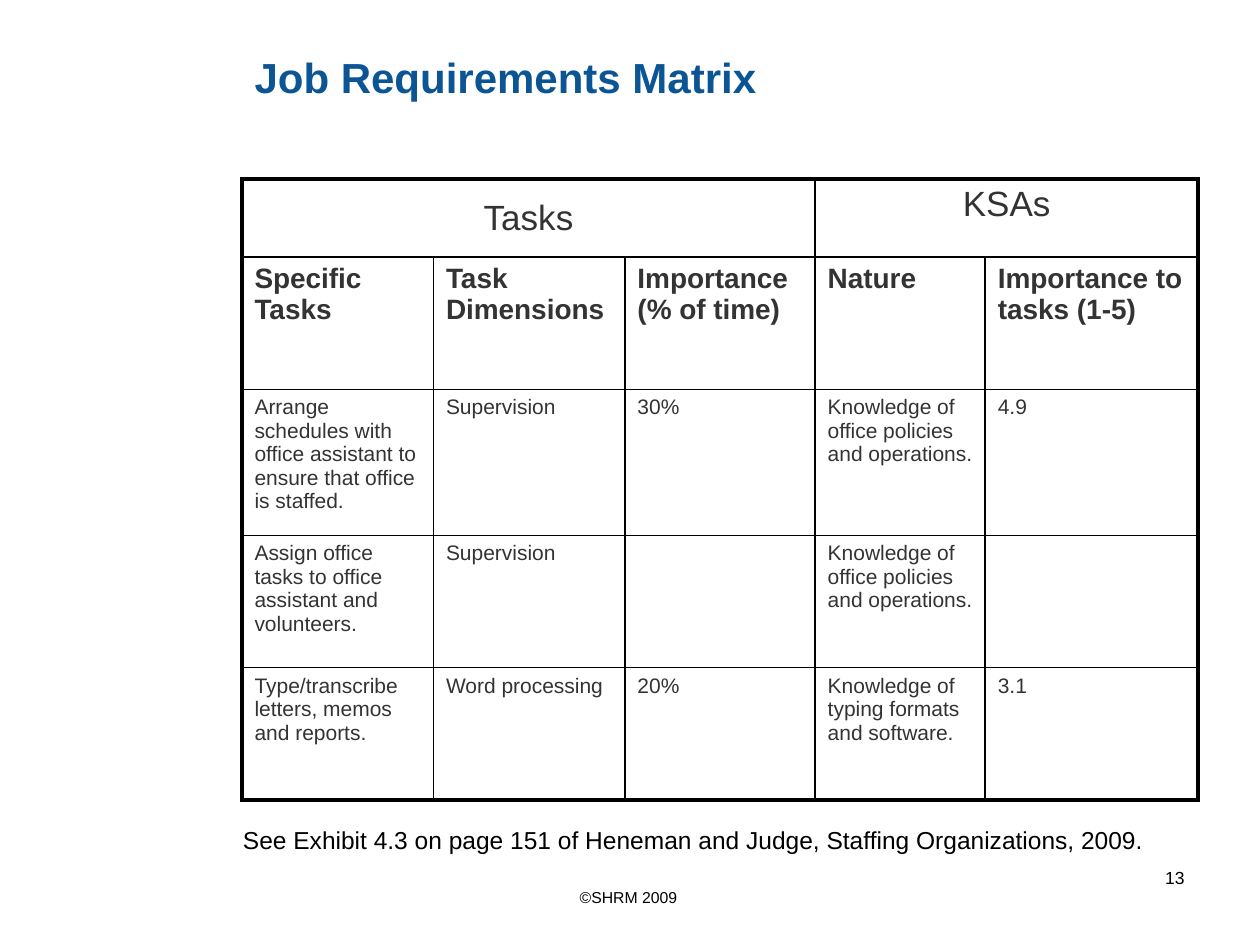
from dataclasses import dataclass

import pptx
import pptx.dml.color
import pptx.enum.text
import pptx.oxml
import pptx.oxml.ns
import pptx.util

Pt = pptx.util.Pt
Align = pptx.enum.text.PP_ALIGN
Anchor = pptx.enum.text.MSO_ANCHOR
AutoSize = pptx.enum.text.MSO_AUTO_SIZE

FONT = "Arial"
BLUE, GREY, BLACK = "0B5594", "333333", "000000"
THIN, THICK = 1, 2.25
CONTENT_LEFT = 138.24
COLUMN_WIDTHS = [109.44, 109.44, 108.72, 97.2, 121.68]
ROW_HEIGHTS = [44.64, 75.6, 83.52, 75.6, 75.6]
GROUP_ROW, HEADING_ROW = 0, 1
ROWS = [
    ["Tasks", "", "", "KSAs", ""],
    ["Specific Tasks", "Task Dimensions", "Importance (% of time)",
     "Nature", "Importance to tasks (1-5)"],
    ["Arrange schedules with office assistant to ensure that office is staffed.",
     "Supervision", "30%", "Knowledge of office policies and operations.", "4.9"],
    ["Assign office tasks to office assistant and volunteers.",
     "Supervision", "", "Knowledge of office policies and operations.", ""],
    ["Type/transcribe letters, memos and reports.",
     "Word processing", "20%", "Knowledge of typing formats and software.", "3.1"],
]


@dataclass
class Box:
    left: float
    top: float
    width: float
    height: float

    def lengths(self):
        return [Pt(value) for value in (self.left, self.top, self.width, self.height)]


@dataclass
class Caption:
    text: str
    box: Box
    size: float
    align: Align = Align.LEFT
    grow: bool = False


CAPTIONS = [
    Caption("See Exhibit 4.3 on page 151 of Heneman and Judge, Staffing Organizations, 2009.",
            Box(131.76, 468, 552.24, 23.76), 14, grow=True),
    Caption("13", Box(516.24, 491.76, 167.76, 37.44), 10, Align.RIGHT),
    Caption("©SHRM 2009 ", Box(246.24, 504, 228.24, 25.2), 9, Align.CENTER),
]


def color(value: str):
    return pptx.dml.color.RGBColor.from_string(value)


def write(text_frame, text: str, *, size: float, fill: str = BLACK,
          bold: bool = False, align: Align = Align.LEFT) -> None:
    paragraph = text_frame.paragraphs[0]
    paragraph.alignment = align
    paragraph.space_before = Pt(0)
    run = paragraph.add_run()
    run.text = text
    run.font.name = FONT
    run.font.size = Pt(size)
    run.font.bold = bold
    run.font.color.rgb = color(fill)


def set_borders(cell, widths: dict[str, float]) -> None:
    """Draw solid borders; widths maps L, R, T, B, in that order, to points."""
    properties = cell._tc.get_or_add_tcPr()
    namespace = pptx.oxml.ns.nsdecls("a")
    for index, (side, width) in enumerate(widths.items()):
        line = pptx.oxml.parse_xml(
            f'<a:ln{side} {namespace} w="{Pt(width)}"><a:solidFill>'
            f'<a:srgbClr val="{BLACK}"/></a:solidFill></a:ln{side}>')
        properties.insert(index, line)


def add_title(slide, text: str) -> None:
    title = slide.shapes.title
    title.left, title.top, title.width, title.height = Box(
        CONTENT_LEFT, 21.6, 545.76, 44.64).lengths()
    title.text_frame.auto_size = AutoSize.NONE
    title.text_frame.vertical_anchor = Anchor.MIDDLE
    write(title.text_frame, text, size=24, fill=BLUE, bold=True)


def add_matrix(slide) -> None:
    box = Box(CONTENT_LEFT, 102.24, sum(COLUMN_WIDTHS), sum(ROW_HEIGHTS))
    table = slide.shapes.add_table(
        len(ROW_HEIGHTS), len(COLUMN_WIDTHS), *box.lengths()).table
    table.first_row = table.horz_banding = False
    for column, width in zip(table.columns, COLUMN_WIDTHS):
        column.width = Pt(width)
    for row, height in zip(table.rows, ROW_HEIGHTS):
        row.height = Pt(height)
    for first, last in ((0, 2), (3, 4)):
        table.cell(GROUP_ROW, first).merge(table.cell(GROUP_ROW, last))

    for row_index, texts in enumerate(ROWS):
        for column_index, text in enumerate(texts):
            cell = table.cell(row_index, column_index)
            cell.fill.background()
            span = cell.span_width if cell.is_merge_origin else 1
            outer = {
                "L": column_index == 0,
                "R": column_index + span == len(COLUMN_WIDTHS),
                "T": row_index == 0,
                "B": row_index == len(ROWS) - 1,
            }
            set_borders(cell, {side: THICK if edge else THIN
                               for side, edge in outer.items()})
            if text:
                write(cell.text_frame, text, fill=GREY,
                      size={GROUP_ROW: 20, HEADING_ROW: 16}.get(row_index, 12),
                      bold=row_index == HEADING_ROW,
                      align=Align.CENTER if row_index == GROUP_ROW else Align.LEFT)
    table.cell(GROUP_ROW, 0).vertical_anchor = Anchor.MIDDLE


def add_caption(slide, caption: Caption) -> None:
    text_frame = slide.shapes.add_textbox(*caption.box.lengths()).text_frame
    text_frame.word_wrap = True
    if caption.grow:
        text_frame.auto_size = AutoSize.SHAPE_TO_FIT_TEXT
    write(text_frame, caption.text, size=caption.size, align=caption.align)


def main() -> None:
    presentation = pptx.Presentation()
    presentation.slide_width, presentation.slide_height = Pt(720), Pt(540)
    title_only = presentation.slide_layouts[5]
    slide = presentation.slides.add_slide(title_only)
    add_title(slide, "Job Requirements Matrix")
    add_matrix(slide)
    for caption in CAPTIONS:
        add_caption(slide, caption)
    presentation.save("out.pptx")


if __name__ == "__main__":
    main()
